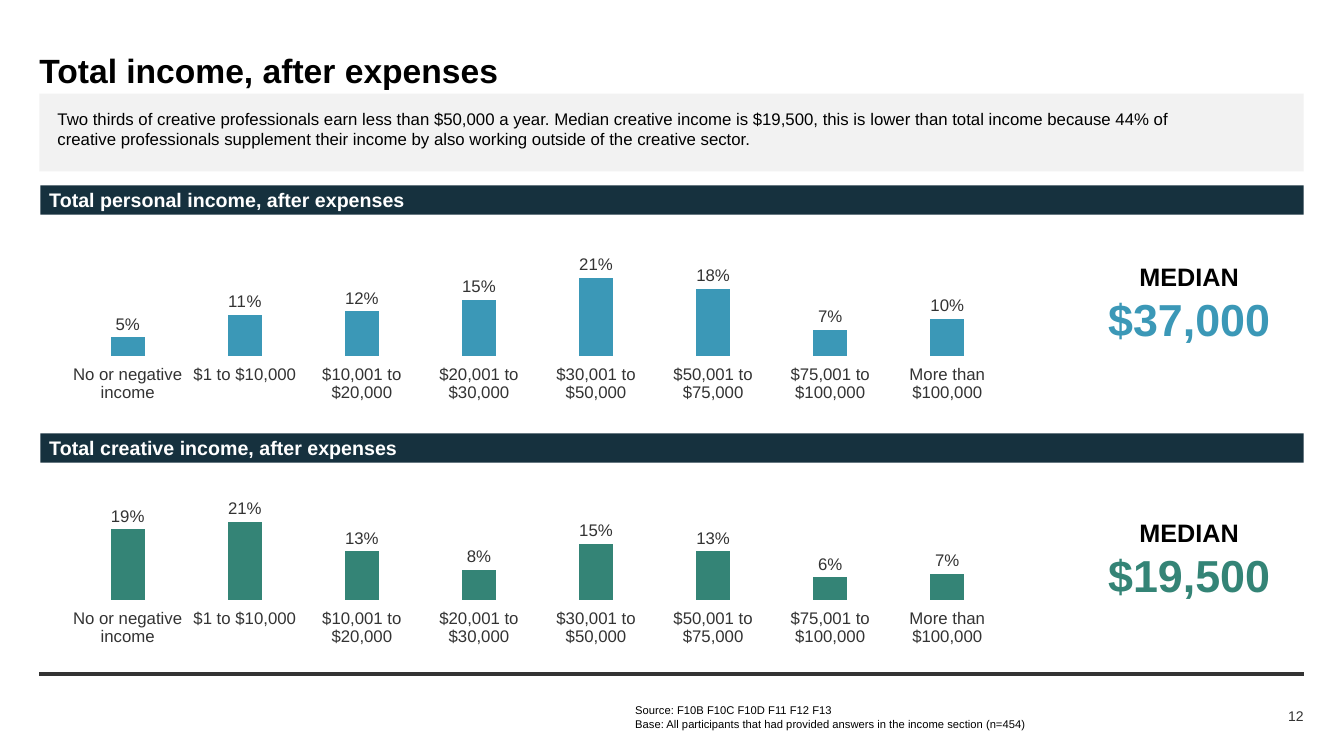
from lxml.etree import SubElement, fromstring
from pptx import Presentation
from pptx.chart.data import CategoryChartData
from pptx.dml.color import RGBColor
from pptx.enum.chart import XL_CHART_TYPE, XL_LABEL_POSITION, XL_TICK_MARK
from pptx.enum.shapes import MSO_CONNECTOR, MSO_SHAPE
from pptx.enum.text import MSO_ANCHOR, PP_ALIGN
from pptx.oxml.ns import qn
from pptx.util import Inches, Pt

FONT = "Arial"
LEFT, WIDTH = 0.39, 12.54
BRACKETS = ["No or negative income", "$1 to $10,000", "$10,001 to $20,000",
            "$20,001 to $30,000", "$30,001 to $50,000", "$50,001 to $75,000",
            "$75,001 to $100,000", "More than $100,000"]
PLOT = {"x": 0.026, "y": 0.226, "w": 0.843, "h": 0.475}


def rgb(value):
    return RGBColor.from_string(value)


def style(font, size, color="000000", bold=False):
    font.name, font.size, font.bold = FONT, Pt(size), bold
    font.color.rgb = rgb(color)


def add_run(p, text, align=PP_ALIGN.LEFT, **fmt):
    p.alignment = align
    r = p.add_run()
    r.text = text
    style(r.font, **fmt)


def set_frame(tf, anchor=MSO_ANCHOR.TOP, inset=0):
    tf.word_wrap = True
    tf.vertical_anchor = anchor
    tf.margin_left = tf.margin_right = Inches(inset)
    tf.margin_top = tf.margin_bottom = Inches(inset / 2)


def add_text(s, box, lines, anchor=MSO_ANCHOR.TOP, inset=0):
    tf = s.shapes.add_textbox(*map(Inches, box)).text_frame
    set_frame(tf, anchor, inset)
    for i, (text, fmt) in enumerate(lines):
        p = tf.add_paragraph() if i else tf.paragraphs[0]
        add_run(p, text, **fmt)


def add_band(s, box, color):
    sp = s.shapes.add_shape(MSO_SHAPE.RECTANGLE, *map(Inches, box))
    sp.shadow.inherit = False
    sp.fill.solid()
    sp.fill.fore_color.rgb = rgb(color)
    sp.line.fill.background()


def set_plot_layout(chart):
    ns = "http://schemas.openxmlformats.org/drawingml/2006/chart"
    sizes = "".join(f'<c:{k} val="{v}"/>' for k, v in PLOT.items())
    layout = fromstring(
        f'<c:layout xmlns:c="{ns}"><c:manualLayout><c:layoutTarget val="inner"/>'
        f'<c:xMode val="edge"/><c:yMode val="edge"/>{sizes}</c:manualLayout></c:layout>')
    area = chart.element.find(".//" + qn("c:plotArea"))
    old = area.find(qn("c:layout"))
    if old is not None:
        area.remove(old)
    area.insert(0, layout)


def add_income_chart(s, box, shares, color):
    data = CategoryChartData(number_format="###0%")
    data.categories = BRACKETS
    data.add_series("Series 1", shares)
    chart = s.shapes.add_chart(
        XL_CHART_TYPE.COLUMN_CLUSTERED, *map(Inches, box), data).chart
    style(chart.font, 10, "333333")
    chart.has_legend = chart.has_title = False
    set_plot_layout(chart)

    axis = chart.category_axis
    axis.major_tick_mark = XL_TICK_MARK.OUTSIDE
    axis.format.line.fill.background()
    style(axis.tick_labels.font, 12, "333333")
    axis = chart.value_axis
    axis.visible = axis.has_major_gridlines = False
    axis.minimum_scale, axis.maximum_scale = 0, 0.25

    plot = chart.plots[0]
    plot.gap_width = 247
    plot.vary_by_categories = False
    fill = plot.series[0].format.fill
    fill.solid()
    fill.fore_color.rgb = rgb(color)
    plot.has_data_labels = True
    labels = plot.data_labels
    labels.show_value = True
    labels.number_format, labels.number_format_is_linked = "###0%", False
    labels.position = XL_LABEL_POSITION.OUTSIDE_END
    style(labels.font, 12, "333333")


def add_heading(s, box):
    x, y, w, h = box
    title = s.shapes.title
    title.left, title.top, title.width, title.height = map(Inches, (x, y, w, 0.44))
    set_frame(title.text_frame, MSO_ANCHOR.MIDDLE)
    add_run(title.text_frame.paragraphs[0], "Total income, after expenses",
            size=24, bold=True)
    add_band(s, (x, y + 0.46, w, h - 0.46), "F2F2F2")
    add_text(s, (x + 0.18, y + 0.61, 11.63, 0.43), [(
        "Two thirds of creative professionals earn less than $50,000 a year. "
        "Median creative income is $19,500, this is lower than total income because "
        "44% of creative professionals supplement their income by also working "
        "outside of the creative sector.", dict(size=12))])


def add_section(s, box, chart_gap, median_gap, heading, median, shares, color):
    x, y, w = box
    add_band(s, (x, y, w, 0.29), "16313E")
    add_text(s, (x - 0.01, y - 0.02, 4.87, 0.34),
             [(heading, dict(size=14, color="FFFFFF", bold=True))], inset=0.1)
    add_income_chart(s, (x, y + chart_gap, 11.02, 1.94), shares, color)
    bold = dict(align=PP_ALIGN.CENTER, bold=True)
    add_text(s, (x + 10.58, y + median_gap, 1.63, 0.84),
             [("MEDIAN", dict(size=18, **bold)),
              (median, dict(size=32, color=color, **bold))])


def add_footer(s, box):
    x, y, w = box
    line = s.shapes.add_connector(
        MSO_CONNECTOR.STRAIGHT, *map(Inches, (x, y, x + w, y)))
    line.line.color.rgb = rgb("333333")
    line.line.width = Pt(3)
    SubElement(line.element.spPr, qn("a:effectLst"))
    small = dict(size=8)
    add_text(s, (x + 5.91, y + 0.29, 6.49, 0.3), [
        ("Source: F10B F10C F10D F11 F12 F13", small),
        ("Base: All participants that had provided answers in the income section (n=454)",
         small)])
    add_text(s, (x + 11.48, y + 0.3, 1.06, 0.22),
             [("12", dict(size=10, color="333333", align=PP_ALIGN.RIGHT))],
             MSO_ANCHOR.MIDDLE)


def main():
    prs = Presentation()
    prs.slide_width, prs.slide_height = Inches(13.33), Inches(7.5)
    s = prs.slides.add_slide(prs.slide_layouts[5])
    add_heading(s, (LEFT, 0.47, WIDTH, 1.23))
    add_section(s, (0.4, 1.84, 12.53), 0.33, 0.75,
                "Total personal income, after expenses", "$37,000",
                (0.05, 0.11, 0.12, 0.15, 0.21, 0.18, 0.07, 0.1), "3B98B7")
    add_section(s, (0.4, 4.3, 12.53), 0.29, 0.83,
                "Total creative income, after expenses", "$19,500",
                (0.19, 0.21, 0.13, 0.08, 0.15, 0.13, 0.06, 0.07), "348476")
    add_footer(s, (LEFT, 6.69, WIDTH))
    prs.save("out.pptx")


if __name__ == "__main__":
    main()
